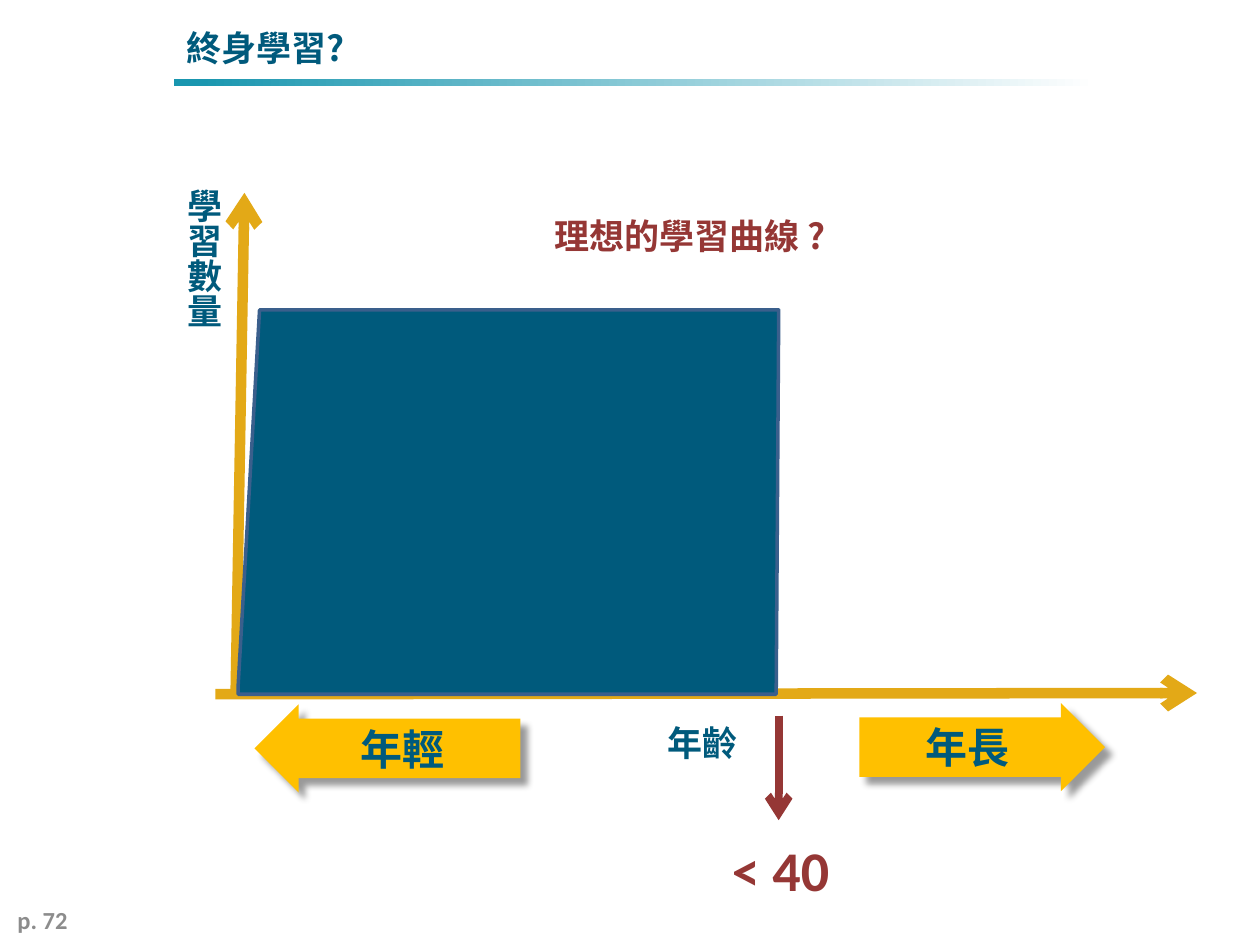
from dataclasses import dataclass

from lxml import etree
from pptx import Presentation
from pptx.dml.color import RGBColor
from pptx.enum.shapes import MSO_CONNECTOR, MSO_SHAPE
from pptx.enum.text import MSO_ANCHOR, PP_ALIGN
from pptx.oxml.ns import qn
from pptx.util import Inches, Pt

RECTANGLE, RIGHT_ARROW = MSO_SHAPE.RECTANGLE, MSO_SHAPE.RIGHT_ARROW
STRAIGHT = MSO_CONNECTOR.STRAIGHT
LEFT, CENTER = PP_ALIGN.LEFT, PP_ALIGN.CENTER
TOP, MIDDLE = MSO_ANCHOR.TOP, MSO_ANCHOR.MIDDLE

# The slide is a grid of 100 columns by 75 rows
COLUMNS, ROWS = 100, 75
WIDTH, HEIGHT = Inches(10), Inches(7.5)

CJK, LATIN = "Noto Sans CJK SC", "Calibri"
TEAL, GOLD, YELLOW, RED, GREY = "005A7C", "E3A917", "FFC000", "953735", "8C8C8C"


@dataclass(frozen=True)
class Area:
    column: float
    row: float
    columns: float
    rows: float

    def emu(self):
        return x(self.column), y(self.row), x(self.columns), y(self.rows)


@dataclass(frozen=True)
class Label:
    text: str
    area: Area
    size: float = 20
    color: str = TEAL
    font: str = CJK
    align: PP_ALIGN = LEFT
    anchor: MSO_ANCHOR = TOP
    wrap: bool = True
    vertical: bool = False


@dataclass(frozen=True)
class Block:
    text: str
    area: Area
    flipped: bool = False


@dataclass(frozen=True)
class Arrow:
    start: tuple[float, float]
    end: tuple[float, float]
    color: str
    weight: float


LABELS = [
    Label("p. 72", Area(0.4, 71, 35, 4), 14, GREY, LATIN, anchor=MIDDLE),
    Label("終身學習?", Area(13.8, 0.6, 86.2, 6.3), anchor=MIDDLE),
    Label("年齡", Area(47.6, 56.8, 16.4, 4.4), align=CENTER),
    Label("學習數量", Area(12.9, 14.2, 5.4, 45.3), vertical=True),
    Label("理想的學習曲線 ?", Area(43, 16.5, 23.7, 4.4), color=RED, wrap=False),
    Label("< 40", Area(57.1, 65.8, 9.8, 6.4), 32, RED, LATIN, wrap=False),
]
BLOCKS = [
    Block("年長", Area(68.2, 55.8, 19.5, 7)),
    Block("年輕", Area(20.2, 55.9, 21.1, 7), flipped=True),
]
AXES = [
    Arrow((17.1, 55.1), (95, 55), GOLD, 6),
    Arrow((18.7, 55.2), (19.4, 15.3), GOLD, 6),
]
AGE_LIMIT = Arrow((61.8, 56.8), (61.8, 65.1), RED, 4.5)
CURVE = [(18.9, 54.4), (20.6, 24.6), (61.8, 24.6), (61.6, 55.1), (18.9, 55.1)]


def x(column: float) -> int:
    return round(WIDTH * column / COLUMNS)


def y(row: float) -> int:
    return round(HEIGHT * row / ROWS)


def rgb(color: str) -> RGBColor:
    return RGBColor.from_string(color)


def write(frame, text: str, size: float, color: str, font: str, align) -> None:
    para = frame.paragraphs[0]
    para.alignment = align
    span = para.add_run()
    span.text = text
    span.font.size = Pt(size)
    span.font.bold = True
    span.font.name = font
    span.font.color.rgb = rgb(color)
    east_asian = etree.SubElement(span.font._element, qn("a:ea"))
    east_asian.set("typeface", font)


def draw_label(page, label: Label) -> None:
    frame = page.shapes.add_textbox(*label.area.emu()).text_frame
    frame.word_wrap = label.wrap
    frame.vertical_anchor = label.anchor
    if label.vertical:
        frame._bodyPr.set("vert", "eaVert")
        frame.margin_top = Inches(0.08)
    write(frame, label.text, label.size, label.color, label.font, label.align)


def add_shadow(shape) -> None:
    """Cast a soft shadow to the lower right."""
    shape.shadow.inherit = False
    effects = shape._element.spPr.find(qn("a:effectLst"))
    shadow = etree.SubElement(
        effects, qn("a:outerShdw"), blurRad=str(Pt(4)), dist=str(Pt(6)),
        dir=str(45 * 60000), algn="tl", rotWithShape="0")
    black = etree.SubElement(shadow, qn("a:srgbClr"), val="000000")
    etree.SubElement(black, qn("a:alpha"), val="40000")


def draw_block(page, block: Block) -> None:
    shape = page.shapes.add_shape(RIGHT_ARROW, *block.area.emu())
    shape.adjustments[0], shape.adjustments[1] = 0.675, 0.5
    shape.fill.solid()
    shape.fill.fore_color.rgb = rgb(YELLOW)
    shape.line.fill.background()
    add_shadow(shape)
    if block.flipped:
        shape._element.spPr.xfrm.set("flipH", "1")
    shape.text_frame.vertical_anchor = MIDDLE
    write(shape.text_frame, block.text, 24, TEAL, CJK, CENTER)


def draw_arrow(page, arrow: Arrow) -> None:
    (x1, y1), (x2, y2) = arrow.start, arrow.end
    connector = page.shapes.add_connector(STRAIGHT, x(x1), y(y1), x(x2), y(y2))
    connector.line.color.rgb = rgb(arrow.color)
    connector.line.width = Pt(arrow.weight)
    properties = connector._element.spPr
    etree.SubElement(properties.get_or_add_ln(), qn("a:tailEnd"), type="arrow")
    etree.SubElement(properties, qn("a:effectLst"))


def draw_curve(page) -> None:
    points = [(x(column), y(row)) for column, row in CURVE]
    builder = page.shapes.build_freeform(*points[0])
    builder.add_line_segments(points[1:], close=True)
    shape = builder.convert_to_shape()
    shape.shadow.inherit = False
    shape.fill.solid()
    shape.fill.fore_color.rgb = rgb(TEAL)
    shape.line.color.rgb = rgb("3A5F8C")
    shape.line.width = Pt(2)


def draw_title_rule(page) -> None:
    rule = page.shapes.add_shape(RECTANGLE, *Area(13.8, 6.3, 73.2, 0.5).emu())
    rule.shadow.inherit = False
    rule.line.fill.background()
    rule.fill.gradient()
    rule.fill.gradient_angle = 0
    stops = [(0.02, "1996AF"), (1, "FFFFFF")]
    for stop, (position, color) in zip(rule.fill.gradient_stops, stops):
        stop.position = position
        stop.color.rgb = rgb(color)


def main() -> None:
    deck = Presentation()
    deck.slide_width, deck.slide_height = WIDTH, HEIGHT
    page = deck.slides.add_slide(deck.slide_layouts[6])
    draw_title_rule(page)
    for block in BLOCKS:
        draw_block(page, block)
    for axis in AXES:
        draw_arrow(page, axis)
    draw_curve(page)
    draw_arrow(page, AGE_LIMIT)
    for label in LABELS:
        draw_label(page, label)
    deck.save("out.pptx")


if __name__ == "__main__":
    main()
